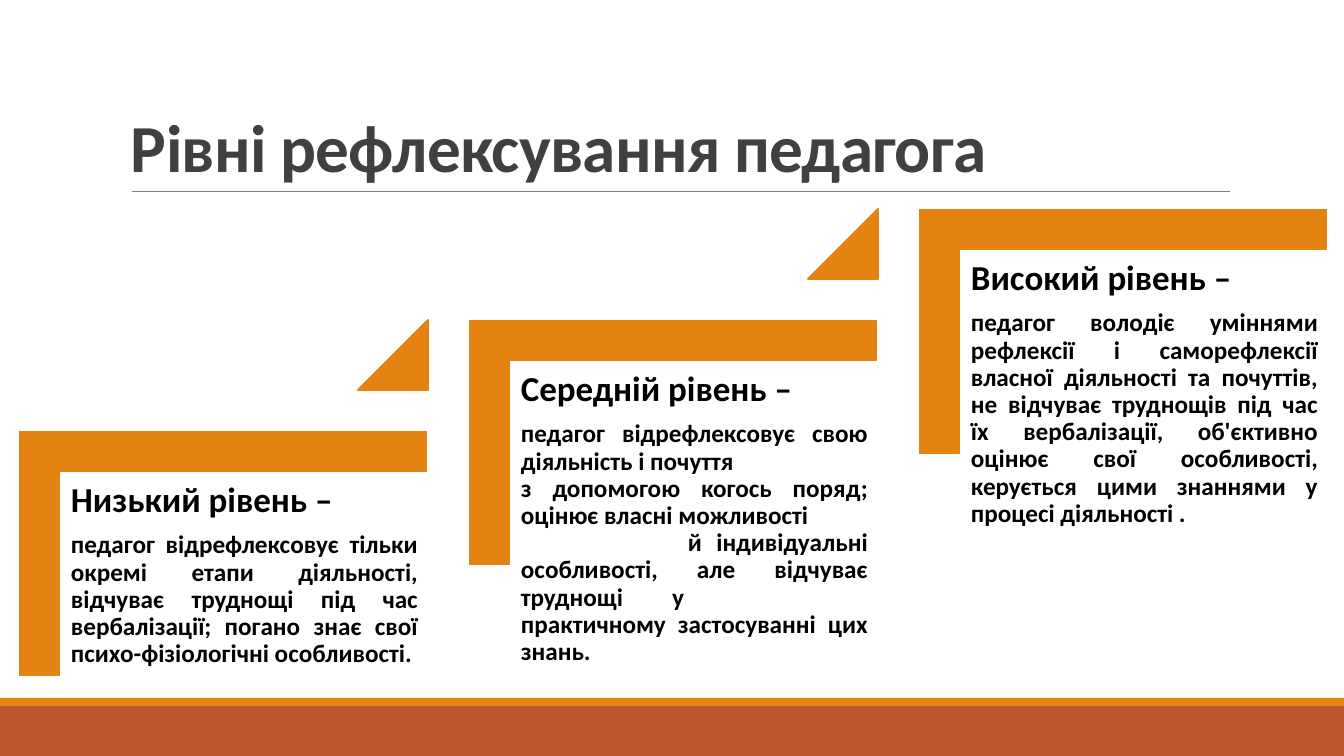
from lxml import etree
from pptx import Presentation
from pptx.dml.color import RGBColor
from pptx.enum.shapes import MSO_CONNECTOR, MSO_SHAPE
from pptx.enum.text import MSO_ANCHOR, MSO_AUTO_SIZE, PP_ALIGN
from pptx.oxml.ns import qn
from pptx.util import Pt

RECTANGLE, CORNER, TRIANGLE = MSO_SHAPE.RECTANGLE, MSO_SHAPE.CORNER, MSO_SHAPE.ISOSCELES_TRIANGLE
STRAIGHT = MSO_CONNECTOR.STRAIGHT
LEFT, JUSTIFY = PP_ALIGN.LEFT, PP_ALIGN.JUSTIFY
TOP, BOTTOM = MSO_ANCHOR.TOP, MSO_ANCHOR.BOTTOM

WIDTH, HEIGHT = 1344, 756
ORANGE, RUST, GREY, CHARCOAL, BLACK = "E48312", "BD582C", "808080", "404040", "000000"
STEP_LEFT, STEP_TOP, STEP_RIGHT, STEP_UP = 20, 431, 450, 111
BRACKET_WIDTH, BRACKET_HEIGHT, TRIANGLE_SIDE = 407, 244, 70

LEVELS = [
    ("Низький рівень –", [
        ("педагог відрефлексовує тільки окремі етапи діяльності, відчуває труднощі "
         "під час вербалізації; погано знає свої психо-фізіологічні особливості.", {}),
    ]),
    ("Середній рівень –", [
        ("педагог відрефлексовує свою діяльність і почуття", {}),
        ("з допомогою когось поряд; оцінює власні можливості", {}),
        ("й індивідуальні особливості, але відчуває труднощі\tу",
         {"indent": 167, "right_tab": 345}),
        ("практичному застосуванні цих знань.", {}),
    ]),
    ("Високий рівень –", [
        ("педагог володіє уміннями рефлексії і саморефлексії власної діяльності та "
         "почуттів, не відчуває труднощів під час їх вербалізації, об'єктивно оцінює "
         "свої особливості, керується цими знаннями у процесі діяльності .", {}),
    ]),
]


def px(length):
    """Turn slide pixels into EMU."""
    return round(length * 914400 / 100.8)


def color(value):
    """Turn a hex string into a colour."""
    return RGBColor.from_string(value)


def write(paragraph, text, size=18, fill=BLACK, align=JUSTIFY, line_spacing=0.9,
          space_after=0, tracking=0, indent=0, right_tab=None):
    """Write bold text into a paragraph with the given format."""
    paragraph.alignment = align
    paragraph.line_spacing = line_spacing
    paragraph.space_before = Pt(0)
    paragraph.space_after = Pt(space_after)
    properties = paragraph._p.get_or_add_pPr()
    if indent:
        properties.set("indent", str(px(indent)))
    if right_tab:
        tabs = etree.SubElement(properties, qn("a:tabLst"))
        etree.SubElement(tabs, qn("a:tab"), pos=str(px(right_tab)), algn="r")
    run = paragraph.add_run()
    run.text = text
    run.font.name = "Calibri"
    run.font.size = Pt(size)
    run.font.bold = True
    run.font.color.rgb = color(fill)
    if tracking:
        run._r.get_or_add_rPr().set("spc", str(round(tracking * 100)))


class SlideBuilder:
    """Hold the current slide and add styled elements to it."""

    def __init__(self, slide):
        """Keep the slide to build on."""
        self.slide = slide

    def shape(self, kind, left, top, width, height, fill=ORANGE, outline=None,
              adjustments=(), rotation=0):
        """Add a flat preset shape."""
        shape = self.slide.shapes.add_shape(kind, px(left), px(top), px(width), px(height))
        shape.shadow.inherit = False
        shape.fill.solid()
        shape.fill.fore_color.rgb = color(fill)
        if outline:
            shape.line.color.rgb = color(outline)
            shape.line.width = Pt(1.25)
        else:
            shape.line.fill.background()
        for index, value in enumerate(adjustments):
            shape.adjustments[index] = value
        shape.rotation = rotation

    def rule(self, left, right, y):
        """Add a thin horizontal line."""
        line = self.slide.shapes.add_connector(STRAIGHT, px(left), px(y), px(right), px(y))
        line.line.color.rgb = color(GREY)
        line.line.width = Pt(0.5)
        etree.SubElement(line._element.spPr, qn("a:effectLst"))

    def frame(self, shape, anchor, inset_x, inset_y):
        """Prepare the text frame of a shape."""
        frame = shape.text_frame
        frame.word_wrap = True
        frame.auto_size = MSO_AUTO_SIZE.NONE
        frame.vertical_anchor = anchor
        frame.margin_left = frame.margin_right = px(inset_x)
        frame.margin_top = frame.margin_bottom = px(inset_y)
        return frame

    def title(self, text, left, top, width, height):
        """Place and fill the title placeholder."""
        title = self.slide.shapes.title
        title.left, title.top, title.width, title.height = map(px, (left, top, width, height))
        frame = self.frame(title, BOTTOM, 10, 5)
        write(frame.paragraphs[0], text, size=48, fill=CHARCOAL, align=LEFT,
              line_spacing=0.85, tracking=-0.5)

    def level(self, heading, body, left, top):
        """Add one step: a bracket with its heading and description."""
        shift = (BRACKET_WIDTH - BRACKET_HEIGHT) // 2
        self.shape(CORNER, left + shift, top - shift, BRACKET_HEIGHT, BRACKET_WIDTH,
                   outline=ORANGE, adjustments=(0.161, 0.161), rotation=90)
        box = self.slide.shapes.add_textbox(px(left + 41), px(top + 41), px(367), px(322))
        frame = self.frame(box, TOP, 10, 10)
        write(frame.paragraphs[0], heading, size=25, align=LEFT, space_after=8.75)
        for text, layout in body:
            write(frame.add_paragraph(), text, **layout)


def main():
    """Build and save the slide."""
    presentation = Presentation()
    presentation.slide_width, presentation.slide_height = px(WIDTH), px(HEIGHT)
    builder = SlideBuilder(presentation.slides.add_slide(presentation.slide_layouts[5]))
    builder.shape(RECTANGLE, 0, 706, WIDTH, 50, fill=RUST)
    builder.shape(RECTANGLE, 0, 698, WIDTH, 8)
    builder.rule(132, 1230, 191)
    builder.title("Рівні рефлексування педагога", 121, 31, 1151, 160)
    for index, (heading, body) in enumerate(LEVELS):
        left = STEP_LEFT + index * STEP_RIGHT
        top = STEP_TOP - index * STEP_UP
        builder.level(heading, body, left, top)
        if index < len(LEVELS) - 1:
            builder.shape(TRIANGLE, left + BRACKET_WIDTH - TRIANGLE_SIDE + 1, top - STEP_UP,
                          TRIANGLE_SIDE, TRIANGLE_SIDE, outline=ORANGE, adjustments=(1,))
    presentation.save("out.pptx")


if __name__ == "__main__":
    main()
